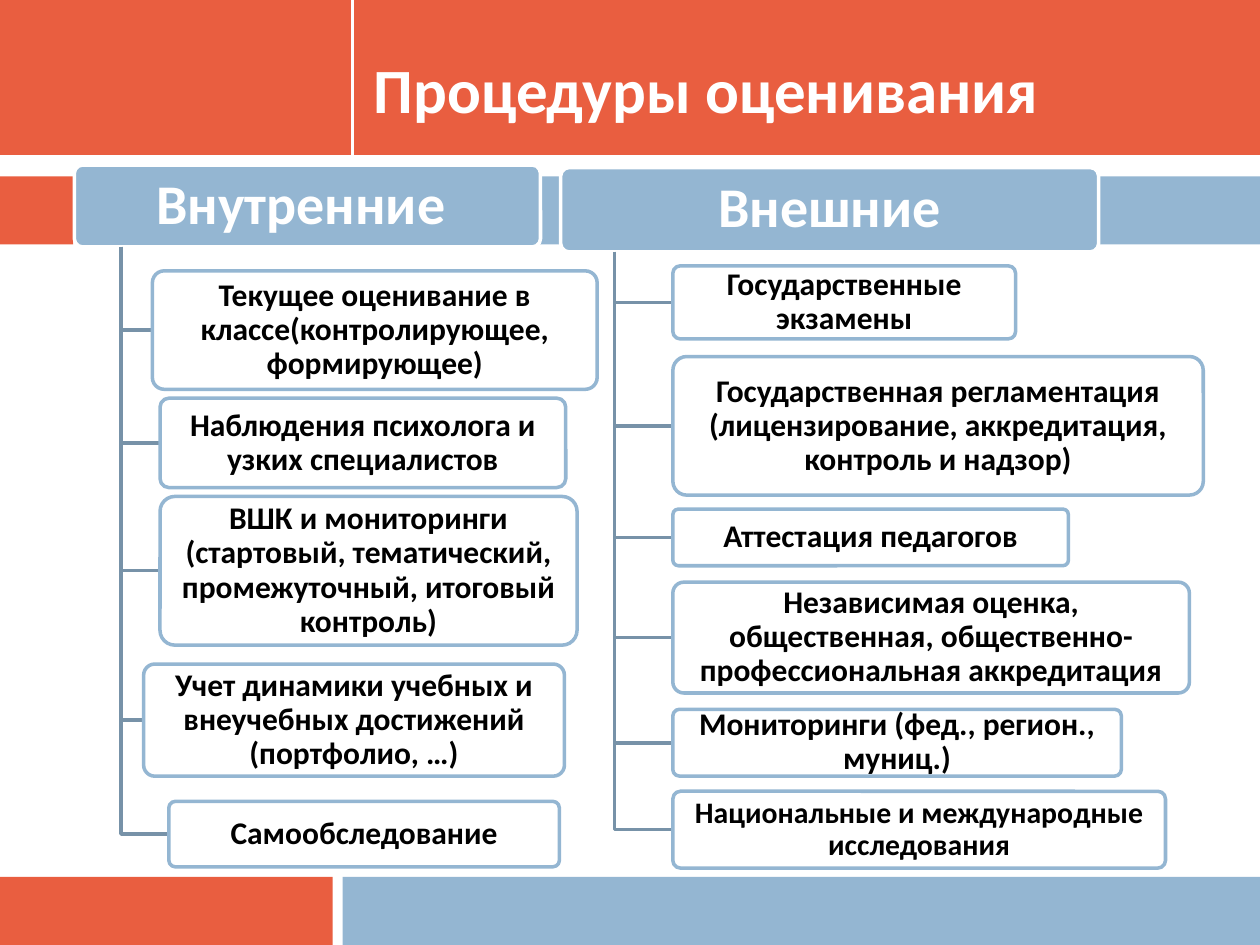
from pptx import Presentation
from pptx.dml.color import RGBColor
from pptx.enum import shapes, text
from pptx.util import Inches, Pt

ORANGE = RGBColor(0xE9, 0x5E, 0x40)
BLUE = RGBColor(0x94, 0xB6, 0xD2)
BRANCH = RGBColor(0x77, 0x92, 0xA8)
WHITE = RGBColor(0xFF, 0xFF, 0xFF)
BLACK = RGBColor(0, 0, 0)

presentation = Presentation()
presentation.slide_width, presentation.slide_height = Inches(10), Inches(7.5)
slide = presentation.slides.add_slide(presentation.slide_layouts[6])


def style_text(frame, content, size, color):
    frame.word_wrap = True
    frame.vertical_anchor = text.MSO_ANCHOR.MIDDLE
    paragraph = frame.paragraphs[0]
    paragraph.text = content
    font = paragraph.runs[0].font
    font.name, font.size, font.bold = "Calibri", Pt(size), True
    font.color.rgb = color
    return paragraph


def add_card(left, top, width, height, content, size, fill, line, color, insets):
    """Add a rounded box with centred text; insets are (horizontal, vertical)."""
    card = slide.shapes.add_shape(
        shapes.MSO_SHAPE.ROUNDED_RECTANGLE,
        Inches(left), Inches(top), Inches(width), Inches(height))
    card.adjustments[0] = 0.1
    card.shadow.inherit = False
    card.fill.solid()
    card.fill.fore_color.rgb = fill
    card.line.color.rgb = line
    card.line.width = Pt(2)
    frame = card.text_frame
    frame.margin_left = frame.margin_right = Inches(insets[0])
    frame.margin_top = frame.margin_bottom = Inches(insets[1])
    paragraph = style_text(frame, content, size, color)
    paragraph.alignment = text.PP_ALIGN.CENTER
    paragraph.line_spacing = 0.9


# Background bands
bands = [
    (0, 6.96, 2.64, 0.54, ORANGE),
    (2.72, 6.96, 7.28, 0.54, BLUE),
    (0, 0, 10, 1.23, ORANGE),
    (0, 1.35, 10, 0.35, WHITE),
    (0, 1.4, 0.58, 0.54, ORANGE),
    (0.65, 1.4, 9.35, 0.54, BLUE),
]
for left, top, width, height, color in bands:
    band = slide.shapes.add_shape(
        shapes.MSO_SHAPE.RECTANGLE,
        Inches(left), Inches(top), Inches(width), Inches(height))
    band.shadow.inherit = False
    band.fill.solid()
    band.fill.fore_color.rgb = color
    band.line.fill.background()

divider = slide.shapes.add_connector(
    shapes.MSO_CONNECTOR.STRAIGHT, Inches(2.8), 0, Inches(2.8), Inches(1.23))
divider.line.color.rgb = WHITE
divider.line.width = Pt(1.5)
properties = divider.element.spPr
properties.append(properties.makeelement(
    "{http://schemas.openxmlformats.org/drawingml/2006/main}effectLst", {}))

title = slide.shapes.add_textbox(Inches(2.87), Inches(0.13), Inches(6.93), Inches(1.18))
style_text(title.text_frame, "Процедуры оценивания", 36, WHITE).line_spacing = Pt(40)

# Each column: heading, its box, then the procedures (left, top, width, height, text, size)
columns = [
    ("Внутренние ", (0.59, 1.31, 3.7, 0.65), [
        (1.21, 2.15, 3.53, 0.94, "Текущее оценивание в классе(контролирующее, формирующее)", 18),
        (1.27, 3.16, 3.22, 0.71, "Наблюдения психолога и узких специалистов", 18),
        (1.27, 3.94, 3.31, 1.18, "ВШК и мониторинги (стартовый, тематический, "
                                 "промежуточный, итоговый контроль)", 18),
        (1.14, 5.27, 3.34, 0.89, "Учет динамики учебных и внеучебных достижений "
                                 "(портфолио, …)", 18),
        (1.34, 6.36, 3.1, 0.52, "Самообследование", 18),
    ]),
    ("Внешние", (4.45, 1.33, 4.27, 0.67), [
        (5.34, 2.11, 2.72, 0.58, "Государственные экзамены", 18),
        (5.34, 2.83, 4.21, 1.1, "Государственная регламентация (лицензирование, "
                                "аккредитация, контроль и надзор)", 18),
        (5.34, 4.04, 3.14, 0.45, "Аттестация педагогов", 18),
        (5.34, 4.62, 4.1, 0.88, "Независимая оценка, общественная, "
                                "общественно-профессиональная аккредитация", 18),
        (5.34, 5.63, 3.56, 0.53, "Мониторинги (фед., регион., муниц.)", 18),
        (5.34, 6.28, 3.91, 0.61, "Национальные и международные исследования", 17),
    ]),
]
for heading, box, procedures in columns:
    add_card(*box, heading, 32, BLUE, WHITE, WHITE, (0.07, 0.04))
    heading_left, heading_top, heading_width, heading_height = box
    trunk = Inches(heading_left + heading_width / 10)
    trunk_top = Inches(heading_top + heading_height)
    for left, top, width, height, content, size in procedures:
        middle = Inches(top + height / 2)
        builder = slide.shapes.build_freeform(trunk, trunk_top)
        builder.add_line_segments([(trunk, middle), (Inches(left), middle)], close=False)
        branch = builder.convert_to_shape()
        branch.shadow.inherit = False
        branch.fill.background()
        branch.line.color.rgb = BRANCH
        branch.line.width = Pt(2)
        add_card(left, top, width, height, content, size, WHITE, BLUE, BLACK, (0.04, 0.03))

presentation.save("out.pptx")
